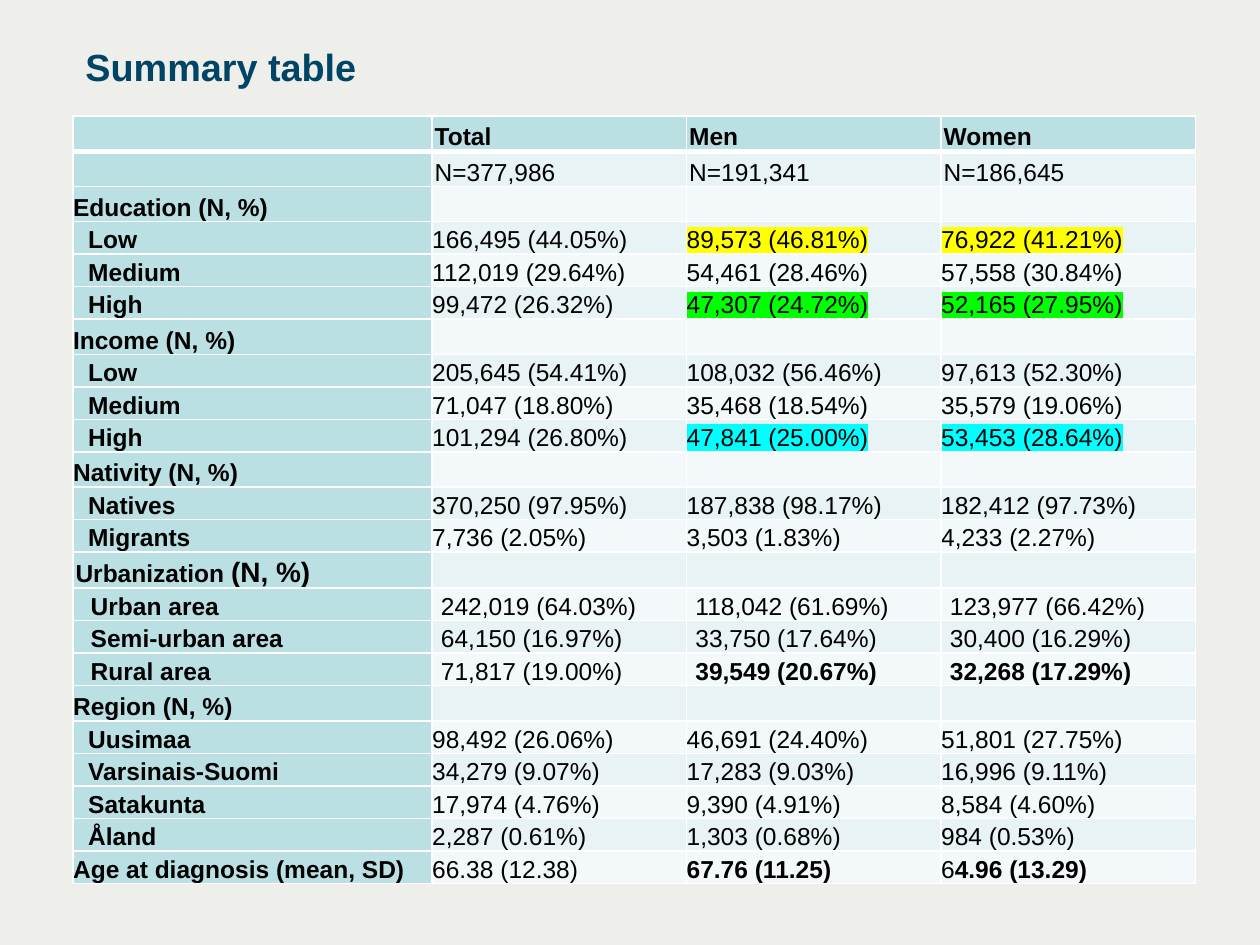
from lxml.etree import SubElement
from pptx import Presentation
from pptx.dml.color import RGBColor
from pptx.enum.text import MSO_ANCHOR as Anchor
from pptx.oxml.ns import qn
from pptx.util import Inches, Pt

FONT = "Arial"
LABEL_FILL, EVEN_FILL, ODD_FILL = "BBE0E3", "F3F9FA", "E7F3F4"
COLUMN_WIDTHS = (2.85, 2.02, 2.02, 2.02)
TABLE_HEIGHT, TALL_ROW = 6.07, 0.28
TALL_ROWS = (0, 1, 2, 6, 10, 17)
INSET_ROWS = (0, 1, 13, 14, 15, 16)
URBAN_ROWS = (14, 15, 16)
HIGHLIGHTS = {3: "FFFF00", 5: "00FF00", 9: "00FFFF"}

# Text after "|" is bold.
ROWS = [
    ("", "|Total", "|Men", "|Women"),
    ("", "N=377,986", "N=191,341", "N=186,645"),
    ("Education (N, %)", "", "", ""),
    ("Low", "166,495 (44.05%)", "89,573 (46.81%)", "76,922 (41.21%)"),
    ("Medium", "112,019 (29.64%)", "54,461 (28.46%)", "57,558 (30.84%)"),
    ("High", "99,472 (26.32%)", "47,307 (24.72%)", "52,165 (27.95%)"),
    ("Income (N, %)", "", "", ""),
    ("Low", "205,645 (54.41%)", "108,032 (56.46%)", "97,613 (52.30%)"),
    ("Medium", "71,047 (18.80%)", "35,468 (18.54%)", "35,579 (19.06%)"),
    ("High", "101,294 (26.80%)", "47,841 (25.00%)", "53,453 (28.64%)"),
    ("Nativity (N, %)", "", "", ""),
    ("Natives", "370,250 (97.95%)", "187,838 (98.17%)", "182,412 (97.73%)"),
    ("Migrants", "7,736 (2.05%)", "3,503 (1.83%)", "4,233 (2.27%)"),
    ("Urbanization (N, %)", "", "", ""),
    ("Urban area", "242,019 (64.03%)", "118,042 (61.69%)", "123,977 (66.42%)"),
    ("Semi-urban area", "64,150 (16.97%)", "33,750 (17.64%)", "30,400 (16.29%)"),
    ("Rural area", "71,817 (19.00%)", "|39,549 (20.67%)", "|32,268 (17.29%)"),
    ("Region (N, %)", "", "", ""),
    ("Uusimaa", "98,492 (26.06%)", "46,691 (24.40%)", "51,801 (27.75%)"),
    ("Varsinais-Suomi", "34,279 (9.07%)", "17,283 (9.03%)", "16,996 (9.11%)"),
    ("Satakunta", "17,974 (4.76%)", "9,390 (4.91%)", "8,584 (4.60%)"),
    ("Åland", "2,287 (0.61%)", "1,303 (0.68%)", "984 (0.53%)"),
    ("Age at diagnosis (mean, SD)", "66.38 (12.38)", "|67.76 (11.25)", "6|4.96 (13.29)"),
]


def color(value):
    return RGBColor.from_string(value)


def set_format(target, values):
    for name, value in values.items():
        setattr(target, name, value)


def add_run(paragraph, text, size=14, bold=False, text_color="000000", highlight=None):
    run = paragraph.add_run()
    run.text = text
    set_format(run.font, {"size": Pt(size), "bold": bold, "name": FONT})
    run.font.color.rgb = color(text_color)
    if highlight:
        properties = run.font._element
        mark = SubElement(properties, qn("a:highlight"))
        SubElement(mark, qn("a:srgbClr"), val=highlight)
        properties.find(qn("a:solidFill")).addnext(mark)


def add_borders(cell, row):
    """Draw white cell edges, heavier beneath the header row."""
    heavy = {0: "lnB", 1: "lnT"}.get(row)
    properties = cell._tc.get_or_add_tcPr()
    for side in ("lnL", "lnR", "lnT", "lnB"):
        width = Pt(3 if side == heavy else 1)
        line = SubElement(properties, qn(f"a:{side}"), w=str(width))
        fill = SubElement(line, qn("a:solidFill"))
        SubElement(fill, qn("a:srgbClr"), val="FFFFFF")


def style_cell(cell, row, column):
    inset = Inches(0.02 if row in INSET_ROWS else 0)
    set_format(cell, {"margin_left": inset, "margin_right": inset, "margin_top": 0,
                      "margin_bottom": 0, "vertical_anchor": Anchor.BOTTOM})
    add_borders(cell, row)
    cell.fill.solid()
    banded = ODD_FILL if row % 2 else EVEN_FILL
    cell.fill.fore_color.rgb = color(LABEL_FILL if row == 0 or column == 0 else banded)


def indent_first_line(paragraph, inches):
    paragraph._p.get_or_add_pPr().set("indent", str(Inches(inches)))


def fill_label(paragraph, row, text):
    if ROWS[row][1] and "(" not in text:
        indent_first_line(paragraph, 0.12)
    if text.startswith("Urbanization"):
        name, unit = text.split(" ", 1)
        add_run(paragraph, name + " ", bold=True)
        add_run(paragraph, unit, size=16, bold=True)
    else:
        add_run(paragraph, text, bold=True)


def fill_value(paragraph, row, column, text):
    if row in URBAN_ROWS:
        indent_first_line(paragraph, 0.05)
    plain, _, strong = text.partition("|")
    highlight = HIGHLIGHTS.get(row) if column > 1 else None
    for part, bold in ((plain, False), (strong, True)):
        if part:
            add_run(paragraph, part, bold=bold, highlight=highlight)


def fill_cell(cell, row, column, text):
    paragraph = cell.text_frame.paragraphs[0]
    if not text:
        SubElement(paragraph._p, qn("a:endParaRPr"), sz="1400")
        return
    paragraph.line_spacing = 1.07
    if column == 0:
        fill_label(paragraph, row, text)
    else:
        fill_value(paragraph, row, column, text)


def add_title(slide, text):
    box = slide.shapes.add_textbox(Inches(0.58), Inches(0.34), Inches(8.62), Inches(0.37))
    set_format(box.text_frame, {"word_wrap": True, "vertical_anchor": Anchor.MIDDLE})
    add_run(box.text_frame.paragraphs[0], text, size=21.6, bold=True, text_color="004466")


def add_summary_table(slide):
    frame = slide.shapes.add_table(len(ROWS), len(COLUMN_WIDTHS), Inches(0.58), Inches(0.92),
                                   Inches(sum(COLUMN_WIDTHS)), Inches(TABLE_HEIGHT))
    table = frame.table
    set_format(table, {"first_row": False, "horz_banding": False})
    for column, width in zip(table.columns, COLUMN_WIDTHS):
        column.width = Inches(width)
    short_row = (TABLE_HEIGHT - TALL_ROW * len(TALL_ROWS)) / (len(ROWS) - len(TALL_ROWS))
    for row, texts in enumerate(ROWS):
        table.rows[row].height = Inches(TALL_ROW if row in TALL_ROWS else short_row)
        for column, text in enumerate(texts):
            cell = table.cell(row, column)
            style_cell(cell, row, column)
            fill_cell(cell, row, column, text)


def main():
    presentation = Presentation()
    set_format(presentation, {"slide_width": Inches(10), "slide_height": Inches(7.5)})
    slide = presentation.slides.add_slide(presentation.slide_layouts[6])
    slide.background.fill.solid()
    slide.background.fill.fore_color.rgb = color("EEEEEA")
    add_title(slide, "Summary table")
    add_summary_table(slide)
    presentation.save("out.pptx")


if __name__ == "__main__":
    main()
